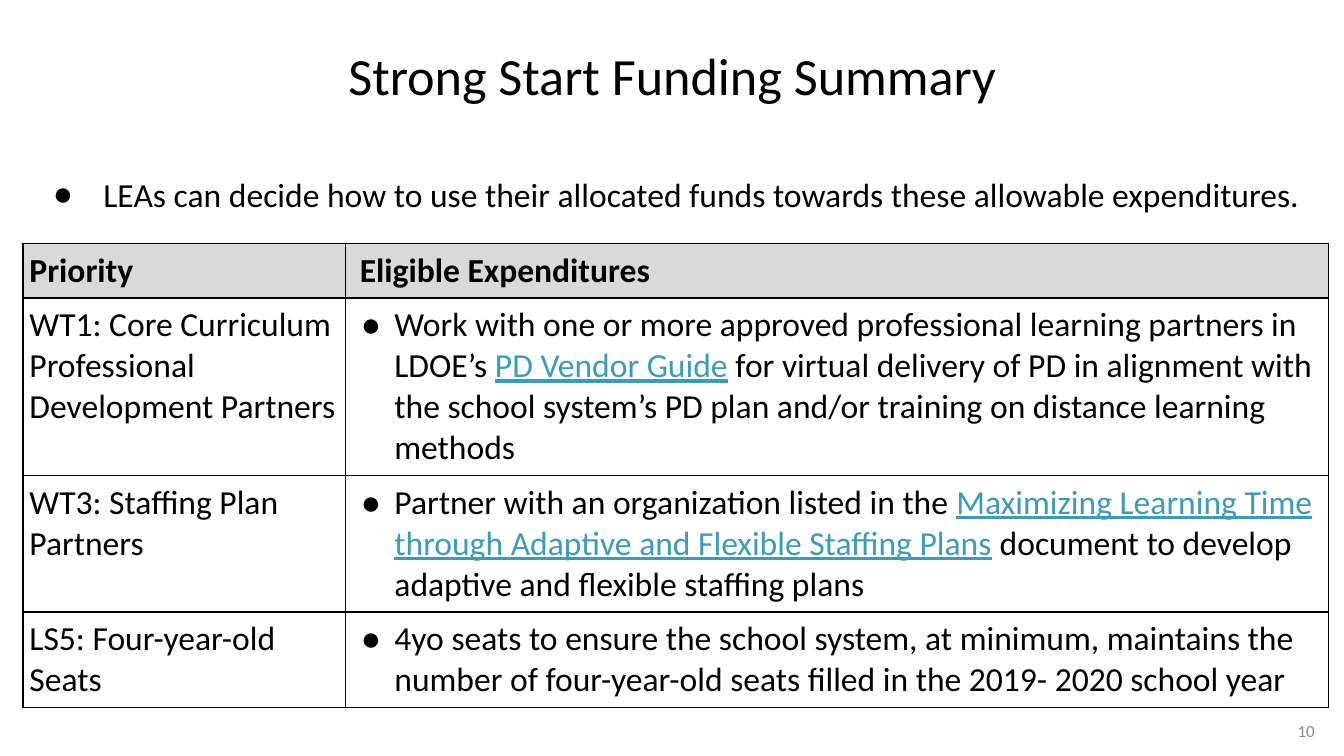
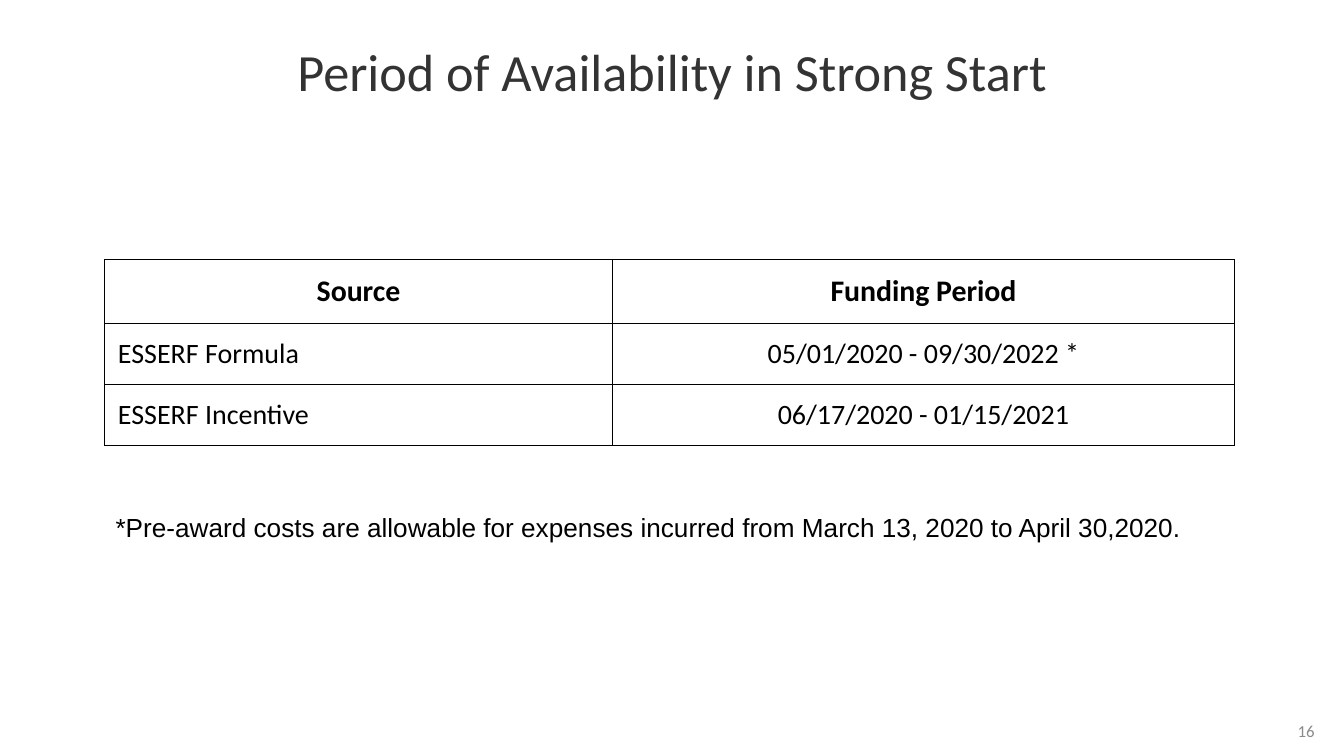
"""Build the Strong Start funding summary and funding period slides."""
from dataclasses import dataclass

from lxml import etree
from pptx import Presentation
from pptx import util as u
from pptx.dml.color import RGBColor
from pptx.enum import text as t
from pptx.oxml import ns

Pt = u.Pt
LEFT, CENTER, RIGHT, JUSTIFY = (
    t.PP_ALIGN.LEFT, t.PP_ALIGN.CENTER, t.PP_ALIGN.RIGHT, t.PP_ALIGN.JUSTIFY)
TOP, MIDDLE = t.MSO_ANCHOR.TOP, t.MSO_ANCHOR.MIDDLE


@dataclass(frozen=True)
class Theme:
    ink: str = "000000"
    title_grey: str = "333333"
    number_grey: str = "8A8A8A"
    link: str = "3D9BBA"
    header: str = "D9D9D9"
    paper: str = "FFFFFF"
    font: str = "Calibri"
    note_font: str = "Arial"
    title_size: int = 28
    body_size: int = 18
    heading_size: int = 16
    period_size: int = 15
    note_size: int = 14
    number_size: int = 9


THEME = Theme()


def rgb(value):
    return RGBColor.from_string(value)


def write(frame, content, *, size=THEME.body_size, color=THEME.ink, font=THEME.font,
          bold=False, align=LEFT, line=1.0, after=0, indent=None, bullet=False):
    """Write one paragraph; every second part of a tuple is a link."""
    paragraph = frame.paragraphs[0]
    paragraph.alignment = align
    paragraph.line_spacing = line
    paragraph.space_before = Pt(0)
    paragraph.space_after = Pt(after)
    props = paragraph._p.get_or_add_pPr()
    if indent:
        props.set("marL", str(Pt(indent[0])))
        props.set("indent", str(Pt(indent[1])))
    if bullet:
        tint = etree.SubElement(props, ns.qn("a:buClr"))
        etree.SubElement(tint, ns.qn("a:srgbClr"), val=color)
        etree.SubElement(props, ns.qn("a:buFont"), typeface="Arial")
        etree.SubElement(props, ns.qn("a:buChar"), char="●")
    parts = (content,) if isinstance(content, str) else content
    for index, part in enumerate(parts):
        is_link = index % 2 == 1
        run = paragraph.add_run()
        run.text = part
        run.font.name = font
        run.font.size = Pt(size)
        run.font.bold = bold
        run.font.underline = is_link
        run.font.color.rgb = rgb(THEME.link if is_link else color)


class Deck:
    """Hold the presentation, its theme and the current slide."""

    def __init__(self, theme):
        self.theme = theme
        self.show = Presentation()
        self.show.slide_width, self.show.slide_height = Pt(720), Pt(405)
        self.slide = None

    def new_slide(self, layout, number):
        self.slide = self.show.slides.add_slide(self.show.slide_layouts[layout])
        self.slide.background.fill.solid()
        self.slide.background.fill.fore_color.rgb = rgb(self.theme.paper)
        self.text_box(number, (535.7, 378, 175.7, 27), anchor=MIDDLE, inset=3.6,
                      size=self.theme.number_size, color=self.theme.number_grey,
                      align=RIGHT)

    def fill_box(self, box, content, place, anchor=TOP, inset=7.2, **style):
        box.left, box.top, box.width, box.height = map(Pt, place)
        frame = box.text_frame
        frame.word_wrap = True
        frame.auto_size = t.MSO_AUTO_SIZE.NONE
        frame.vertical_anchor = anchor
        frame.margin_left = frame.margin_right = Pt(7.2)
        frame.margin_top = frame.margin_bottom = Pt(inset)
        write(frame, content, **style)

    def title(self, content, **style):
        self.fill_box(self.slide.shapes.title, content, (0, -1.4, 720, 82.8),
                      anchor=MIDDLE, size=self.theme.title_size, align=CENTER, **style)

    def bullet_list(self, content, place, **style):
        self.fill_box(self.slide.placeholders[1], content, place, bullet=True, **style)

    def text_box(self, content, place, **style):
        box = self.slide.shapes.add_textbox(*map(Pt, place))
        self.fill_box(box, content, place, **style)

    def table(self, rows, corner, widths, heights, inset, border, fills, styles):
        """Add a table whose last text column spans the remaining grid columns."""
        place = (*corner, sum(widths), sum(heights))
        grid = self.slide.shapes.add_table(len(rows), len(widths), *map(Pt, place)).table
        grid.first_row = grid.horz_banding = False
        for column, width in zip(grid.columns, widths):
            column.width = Pt(width)
        for r, (row, height) in enumerate(zip(rows, heights)):
            grid.rows[r].height = Pt(height)
            for c in range(len(widths)):
                self.format_cell(grid.cell(r, c), fills[min(r, 1)], inset, border)
            last = len(row) - 1
            if last < len(widths) - 1:
                grid.cell(r, last).merge(grid.cell(r, len(widths) - 1))
            for c, content in enumerate(row):
                write(grid.cell(r, c).text_frame, content, **styles[min(r, 1)][c])

    def format_cell(self, cell, fill, inset, border):
        cell.margin_left = cell.margin_right = Pt(inset)
        cell.margin_top = cell.margin_bottom = Pt(inset)
        if fill:
            cell.fill.solid()
            cell.fill.fore_color.rgb = rgb(fill)
        else:
            cell.fill.background()
        props = cell._tc.get_or_add_tcPr()
        for index, side in enumerate(("lnL", "lnR", "lnT", "lnB")):
            edge = etree.Element(ns.qn(f"a:{side}"), w=str(Pt(border)))
            paint = etree.SubElement(edge, ns.qn("a:solidFill"))
            etree.SubElement(paint, ns.qn("a:srgbClr"), val=self.theme.ink)
            props.insert(index, edge)


def funding_summary(deck):
    deck.new_slide(1, "10")
    deck.title("Strong Start Funding Summary", after=10)
    deck.bullet_list(
        "LEAs can decide how to use their allocated funds towards these allowable expenditures.",
        (12.2, 81.4, 699, 98.6), align=JUSTIFY, line=1.2, indent=(36, -27))
    priorities = [
        ("Priority", "Eligible Expenditures"),
        ("WT1: Core Curriculum Professional Development Partners",
         ("Work with one or more approved professional learning partners in LDOE’s ",
          "PD Vendor Guide",
          " for virtual delivery of PD in alignment with the school system’s PD plan "
          "and/or training on distance learning methods")),
        ("WT3: Staffing Plan Partners",
         ("Partner with an organization listed in the ",
          "Maximizing Learning Time through Adaptive and Flexible Staffing Plans",
          " document to develop adaptive and flexible staffing plans")),
        ("LS5: Four-year-old Seats",
         "4yo seats to ensure the school system, at minimum, maintains the number of "
         "four-year-old seats filled in the 2019- 2020 school year"),
    ]
    deck.table(
        priorities, (12.2, 130.4), (173, 155.4, 185.6, 185.6), (29.2, 95.1, 73.1, 51.2),
        inset=3.6, border=1, fills=(THEME.header, None),
        styles=(({"bold": True}, {"bold": True, "indent": (4, 0)}),
                ({}, {"bullet": True, "indent": (22.5, -18)})))


def availability_period(deck):
    deck.new_slide(5, "16")
    deck.title("Period of Availability in Strong Start", color=THEME.title_grey, line=0.9)
    periods = [
        ("Source", "Funding Period"),
        ("ESSERF Formula", "05/01/2020 - 09/30/2022 *"),
        ("ESSERF Incentive", "06/17/2020 - 01/15/2021"),
    ]
    heading = {"size": THEME.heading_size, "bold": True, "align": CENTER}
    source = {"size": THEME.period_size}
    deck.table(
        periods, (56, 139.2), (272.2, 333.2), (33.8, 32.8, 32.8),
        inset=7.2, border=0.75, fills=(THEME.paper, THEME.paper),
        styles=((heading, heading), (source, {**source, "align": CENTER})))
    deck.text_box(
        "*Pre-award costs are allowable for expenses incurred from March 13, 2020 to April 30,2020.",
        (54.8, 267, 607.6, 29.6), size=THEME.note_size, font=THEME.note_font)


def main():
    deck = Deck(THEME)
    funding_summary(deck)
    availability_period(deck)
    deck.show.save("out.pptx")


if __name__ == "__main__":
    main()
